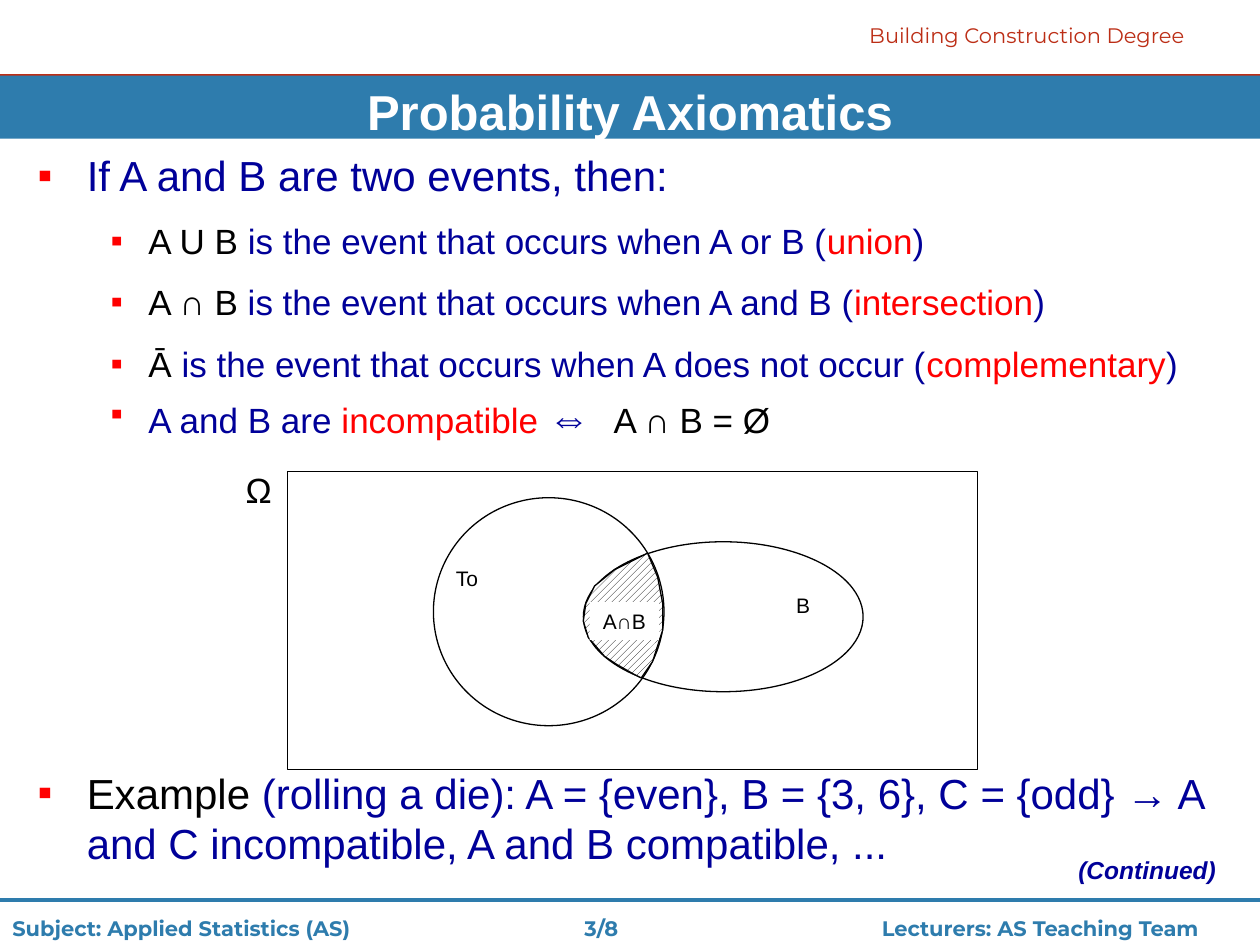
import pptx
import pptx.util
import pptx.dml.color
import pptx.enum.dml
import pptx.enum.shapes
import pptx.enum.text
import pptx.oxml.ns
import lxml.etree

PX = 9144  # EMU per px, 100 px to the inch
COLORS = {
    "rust": "BC2E16", "steel": "2E7CAD", "navy": "000099",
    "red": "FF0000", "black": "000000", "white": "FFFFFF",
}
SHAPES = pptx.enum.shapes.MSO_SHAPE
ALIGN = pptx.enum.text.PP_ALIGN
MIDDLE = pptx.enum.text.MSO_ANCHOR.MIDDLE


def rgb(name):
    return pptx.dml.color.RGBColor.from_string(COLORS[name])


def emu(*lengths):
    return [length * PX for length in lengths]


def add_element(parent, tag, **attributes):
    element = lxml.etree.SubElement(parent, pptx.oxml.ns.qn(tag))
    for name, value in attributes.items():
        element.set(name, str(value))
    return element


def style_font(font, size, color, name="Arial", bold=False, italic=False):
    font.size = pptx.util.Pt(size)
    font.name = name
    font.bold = bold
    font.italic = italic
    font.color.rgb = rgb(color)


def add_text(slide, box, text, size, color, align=None, anchor=None, wrap=True, **style):
    shape = slide.shapes.add_textbox(*emu(*box))
    frame = shape.text_frame
    frame.word_wrap = wrap
    if anchor is not None:
        frame.vertical_anchor = anchor
    paragraph = frame.paragraphs[0]
    paragraph.text = text
    paragraph.alignment = align
    style_font(paragraph.font, size, color, **style)
    return shape


def style_shape(shape, fill=None, line=None):
    shape.shadow.inherit = False
    if fill:
        shape.fill.solid()
        shape.fill.fore_color.rgb = rgb(fill)
    else:
        shape.fill.background()
    if line:
        shape.line.color.rgb = rgb(line)
        shape.line.width = pptx.util.Pt(0.75)
    else:
        shape.line.fill.background()


def add_shape(slide, kind, box, fill=None, line=None):
    shape = slide.shapes.add_shape(kind, *emu(*box))
    style_shape(shape, fill, line)
    return shape


def add_rule(slide, left, top, width, color):
    rule = slide.shapes.add_connector(
        pptx.enum.shapes.MSO_CONNECTOR.STRAIGHT, *emu(left, top, left + width, top))
    rule.line.color.rgb = rgb(color)
    rule.line.width = pptx.util.Pt(2.25)
    add_element(rule._element.spPr, "a:effectLst")


def add_header(slide, left, top, width, height):
    # Degree name, rule and title band
    add_rule(slide, left, top + 60, width, "rust")
    add_shape(slide, SHAPES.RECTANGLE, (left, top + 60, width, height - 60), fill="steel")
    add_text(slide, (left + 680, top + 13, 292, 30), "Building Construction Degree",
             12, "rust", anchor=MIDDLE, wrap=False, name="Montserrat")
    add_text(slide, (left, top + 60, width, 57), "Probability Axiomatics",
             28, "white", align=ALIGN.CENTER, bold=True)


def add_footer(slide, left, top, width, height):
    # Rule, then subject, page and lecturers on tab stops
    add_rule(slide, left, top, width, "steel")
    shape = add_text(slide, (left, top + 8, width, height - 8), "", 12, "steel",
                     anchor=MIDDLE, name="Montserrat", bold=True)
    paragraph = shape.text_frame.paragraphs[0]
    paragraph.text = "Subject: Applied Statistics (AS)\t3/8\tLecturers: AS Teaching Team"
    properties = paragraph._p.get_or_add_pPr()
    tabs = lxml.etree.Element(pptx.oxml.ns.qn("a:tabLst"))
    properties.insert(0, tabs)
    for position in emu(454, 690):
        add_element(tabs, "a:tab", pos=position, algn="l")


def add_bullets(slide, box, items):
    # Each item: level, points before, runs of (text, colour, size, tracking)
    shape = slide.shapes.add_textbox(*emu(*box))
    frame = shape.text_frame
    frame.word_wrap = True
    for index, (level, space, runs) in enumerate(items):
        paragraph = frame.paragraphs[0] if index == 0 else frame.add_paragraph()
        paragraph.level = level
        paragraph.space_before = pptx.util.Pt(space)
        margin, hanging = [(39, 39), (88, 30)][level]
        properties = paragraph._p.get_or_add_pPr()
        properties.set("marL", str(margin * PX))
        properties.set("indent", str(-hanging * PX))
        bullet_color = add_element(properties, "a:buClr")
        add_element(bullet_color, "a:srgbClr", val=COLORS["red"])
        add_element(properties, "a:buFont", typeface="Arial")
        add_element(properties, "a:buChar", char="▪")
        paragraph.font.name = "Arial"
        paragraph.font.size = pptx.util.Pt([24, 20][level])
        for text, color, size, tracking in runs:
            run = paragraph.add_run()
            run.text = text
            style_font(run.font, size, color)
            if tracking:
                run._r.get_or_add_rPr().set("spc", str(tracking))


def definition(symbol, meaning, term):
    parts = [(symbol, "black"), (meaning, "navy"), (term, "red"), (")", "navy")]
    return 1, 11, [(text, color, 20, 0) for text, color in parts]


def add_venn(slide, left, top, width, height):
    # Sample space and the two events
    add_shape(slide, SHAPES.RECTANGLE, (left, top, width, height), line="black")
    add_shape(slide, SHAPES.OVAL, (left + 116, top + 21, 183, 181), line="black")
    add_shape(slide, SHAPES.OVAL, (left + 235, top + 56, 222, 119), line="black")
    # Hatched intersection
    outline = [(286, 65), (260, 78), (244, 91), (237, 105), (235, 119), (239, 132),
               (252, 147), (261, 153), (275, 161), (281, 164), (290, 151), (298, 126),
               (298, 105), (294, 84)]
    builder = slide.shapes.build_freeform(*outline[0], scale=PX)
    builder.add_line_segments(outline[1:], close=True)
    overlap = builder.convert_to_shape(*emu(left, top))
    style_shape(overlap, line="black")
    overlap.fill.patterned()
    overlap.fill.pattern = pptx.enum.dml.MSO_PATTERN.WIDE_UPWARD_DIAGONAL
    overlap.fill.fore_color.rgb = rgb("black")
    overlap.fill.back_color.rgb = rgb("white")
    # Labels
    for x, y, w, h, text, size in [(-43, -7, 48, 43, "Ω", 20),
                                   (124, 70, 48, 30, "To", 12),
                                   (394, 91, 47, 30, "B", 12)]:
        add_text(slide, (left + x, top + y, w, h), text, size, "black")
    label = add_shape(slide, SHAPES.RECTANGLE, (left + 240, top + 104, 55, 30), fill="white")
    label.text_frame.word_wrap = False
    paragraph = label.text_frame.paragraphs[0]
    paragraph.text = "A∩B"
    paragraph.alignment = ALIGN.CENTER
    style_font(paragraph.font, 12, "black")


def main():
    presentation = pptx.Presentation()
    presentation.slide_width, presentation.slide_height = emu(1000, 750)
    slide = presentation.slides.add_slide(presentation.slide_layouts[6])

    add_header(slide, 0, 0, 1000, 110)
    add_footer(slide, 0, 714, 1000, 38)
    add_bullets(slide, (20, 114, 961, 240), [
        (0, 0, [("If A and B are two events, then:", "navy", 24, 0)]),
        definition("A U B ", "is the event that occurs when A or B (", "union"),
        definition("A ∩ B ", "is the event that occurs when A and B (", "intersection"),
        definition("Ā ", "is the event that occurs when A does not occur (", "complementary"),
        (1, 0, [("A and B are ", "navy", 20, 0), ("incompatible ", "red", 20, 0),
                ("⇔", "navy", 24, 0), (" ", "navy", 28, 560),
                ("A ∩ B = Ø", "black", 20, 0)]),
    ])
    add_venn(slide, 228, 374, 548, 237)
    add_bullets(slide, (20, 604, 961, 90), [
        (0, 0, [("Example ", "black", 24, 0),
                ("(rolling a die): A = {even}, B = {3, 6}, C = {odd} → A and C "
                 "incompatible, A and B compatible, ...", "navy", 24, 0)]),
    ])
    add_text(slide, (846, 674, 154, 33), "(Continued)", 14, "navy", bold=True, italic=True)
    presentation.save("out.pptx")


if __name__ == "__main__":
    main()
